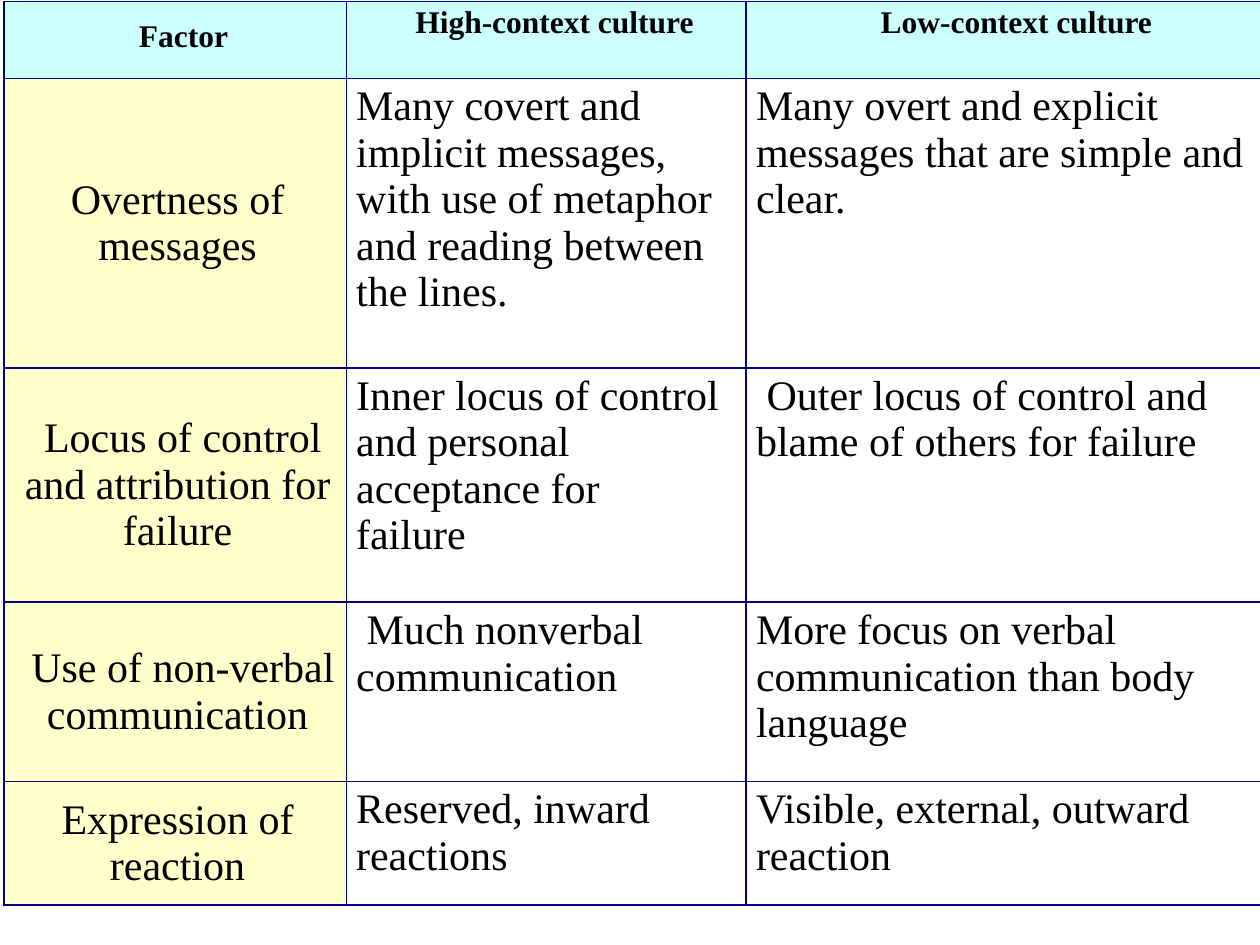
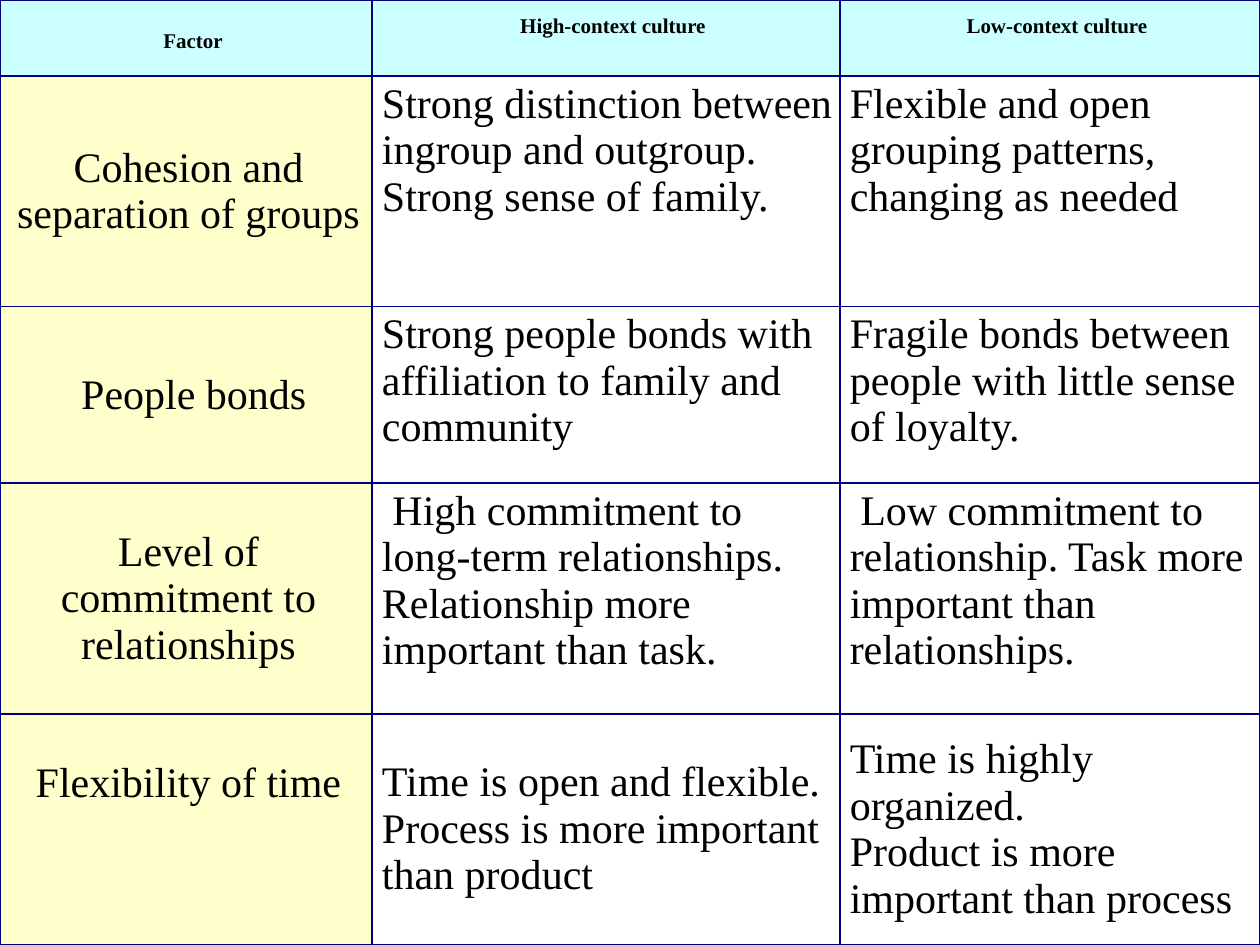
from dataclasses import dataclass

import lxml.etree
import pptx
import pptx.dml.color
import pptx.enum.text
import pptx.oxml.ns
import pptx.presentation
import pptx.table
import pptx.util
from pptx.util import Cm, Pt

COLORS = {"header": "CCFFFF", "factor": "FFFFCC", "border": "000080", "text": "000000"}
FONT = "Times New Roman"
BODY_SIZE = 24
HEADER_LINE = Pt(16.8)
BODY_LINE = Pt(26.5)
INSET = Cm(0.1)
HEADINGS = ("Factor", "High-context culture", "Low-context culture")


@dataclass(frozen=True)
class Entry:
    """Cell text; lead indents its first line, lift is the space kept free below it."""

    text: str
    lead: bool = False
    lift: int = 0
    middle: bool = False


@dataclass(frozen=True)
class ComparisonTable:
    left: float
    top: float
    column_widths: tuple[float, ...]
    row_heights: tuple[float, ...]
    header_size: int
    rows: tuple[tuple[Entry, Entry, Entry], ...]


@dataclass(frozen=True)
class CellStyle:
    size: int
    fill: str | None = None
    bold: bool = False
    centered: bool = False
    margin: pptx.util.Length = Cm(0.1)
    line_spacing: pptx.util.Length | None = None
    spacing: pptx.util.Length | None = None


FACTOR_STYLE = CellStyle(BODY_SIZE, COLORS["factor"], centered=True)
BODY_STYLE = CellStyle(BODY_SIZE)

MESSAGES_AND_REACTIONS = ComparisonTable(
    left=0.08,
    top=0.03,
    column_widths=(6.9, 8.06, 10.56),
    row_heights=(1.55, 5.84, 4.72, 3.61, 2.49),
    header_size=18,
    rows=(
        (
            Entry("Overtness of messages"),
            Entry("Many covert and implicit messages, with use of metaphor "
                  "and reading between the lines."),
            Entry("Many overt and explicit messages that are simple and clear."),
        ),
        (
            Entry("Locus of control and attribution for failure", lead=True),
            Entry("Inner locus of control and personal acceptance for\nfailure"),
            Entry("Outer locus of control and blame of others for failure", lead=True),
        ),
        (
            Entry("Use of non-verbal communication", lead=True),
            Entry("Much nonverbal communication", lead=True),
            Entry("More focus on verbal communication than body language"),
        ),
        (
            Entry("Expression of reaction"),
            Entry("Reserved, inward reactions"),
            Entry("Visible, external, outward reaction"),
        ),
    ),
)

GROUPS_AND_TIME = ComparisonTable(
    left=0,
    top=0,
    column_widths=(7.5, 9.43, 8.47),
    row_heights=(1.53, 4.65, 3.56, 4.65, 4.65),
    header_size=12,
    rows=(
        (
            Entry("Cohesion and separation of groups"),
            Entry("Strong distinction between ingroup and outgroup. "
                  "Strong sense of family."),
            Entry("Flexible and open grouping patterns, changing as needed"),
        ),
        (
            Entry("People bonds", lead=True),
            Entry("Strong people bonds with affiliation to family and community"),
            Entry("Fragile bonds between people with little sense of loyalty."),
        ),
        (
            Entry("Level of commitment to relationships"),
            Entry("High commitment to long-term relationships.\n"
                  "Relationship more important than task.", lead=True),
            Entry("Low commitment to relationship. Task more important "
                  "than relationships.", lead=True),
        ),
        (
            Entry("Flexibility of time", lift=2 * BODY_LINE),
            Entry("Time is open and flexible.\n"
                  "Process is more important than product", middle=True),
            Entry("Time is highly organized.\n"
                  "Product is more important than process", middle=True),
        ),
    ),
)


def draw_borders(cell: pptx.table._Cell) -> None:
    properties = cell._tc.get_or_add_tcPr()
    qualify = pptx.oxml.ns.qn
    for side in ("a:lnL", "a:lnR", "a:lnT", "a:lnB"):
        line = lxml.etree.SubElement(properties, qualify(side), w=str(Pt(1)))
        fill = lxml.etree.SubElement(line, qualify("a:solidFill"))
        lxml.etree.SubElement(fill, qualify("a:srgbClr"), val=COLORS["border"])


def write_text(cell: pptx.table._Cell, entry: Entry, style: CellStyle) -> None:
    paragraph = cell.text_frame.paragraphs[0]
    alignment = pptx.enum.text.PP_ALIGN
    paragraph.alignment = alignment.CENTER if style.centered else alignment.LEFT
    paragraph.line_spacing = style.line_spacing
    paragraph.space_before = paragraph.space_after = style.spacing
    properties = paragraph._p.get_or_add_pPr()
    properties.set("marL", str(style.margin))
    # A leading indent is one space wide: a quarter of the type size.
    properties.set("indent", str(Pt(style.size / 4) if entry.lead else 0))
    for index, line in enumerate(entry.text.split("\n")):
        if index:
            paragraph.add_line_break()
        run = paragraph.add_run()
        run.text = line
        run.font.name = FONT
        run.font.size = Pt(style.size)
        run.font.bold = style.bold
        run.font.color.rgb = pptx.dml.color.RGBColor.from_string(COLORS["text"])


def fill_cell(cell: pptx.table._Cell, entry: Entry, style: CellStyle) -> None:
    draw_borders(cell)
    if style.fill:
        cell.fill.solid()
        cell.fill.fore_color.rgb = pptx.dml.color.RGBColor.from_string(style.fill)
    else:
        cell.fill.background()
    cell.margin_left = cell.margin_right = cell.margin_top = INSET
    cell.margin_bottom = INSET + entry.lift
    anchor = pptx.enum.text.MSO_ANCHOR
    in_middle = style.centered or entry.middle
    cell.vertical_anchor = anchor.MIDDLE if in_middle else anchor.TOP
    write_text(cell, entry, style)


def add_comparison_slide(
    presentation: pptx.presentation.Presentation, comparison: ComparisonTable
) -> None:
    slide = presentation.slides.add_slide(presentation.slide_layouts[6])
    table = slide.shapes.add_table(
        len(comparison.row_heights),
        len(comparison.column_widths),
        Cm(comparison.left),
        Cm(comparison.top),
        Cm(sum(comparison.column_widths)),
        Cm(sum(comparison.row_heights)),
    ).table
    table.first_row = table.horz_banding = False
    for column, width in zip(table.columns, comparison.column_widths):
        column.width = Cm(width)
    for row, height in zip(table.rows, comparison.row_heights):
        row.height = Cm(height)

    header_style = CellStyle(
        comparison.header_size, COLORS["header"], bold=True, centered=True,
        margin=Cm(0.18), line_spacing=HEADER_LINE, spacing=Pt(6),
    )
    for column_index, heading in enumerate(HEADINGS):
        lift = HEADER_LINE if column_index else 0
        entry = Entry(heading, lead=True, lift=lift)
        fill_cell(table.cell(0, column_index), entry, header_style)
    for row_index, entries in enumerate(comparison.rows, start=1):
        for column_index, entry in enumerate(entries):
            style = BODY_STYLE if column_index else FACTOR_STYLE
            fill_cell(table.cell(row_index, column_index), entry, style)


def main() -> None:
    presentation = pptx.Presentation()
    presentation.slide_width = Cm(25.4)
    presentation.slide_height = Cm(19.05)
    for comparison in (MESSAGES_AND_REACTIONS, GROUPS_AND_TIME):
        add_comparison_slide(presentation, comparison)
    presentation.save("out.pptx")


if __name__ == "__main__":
    main()
